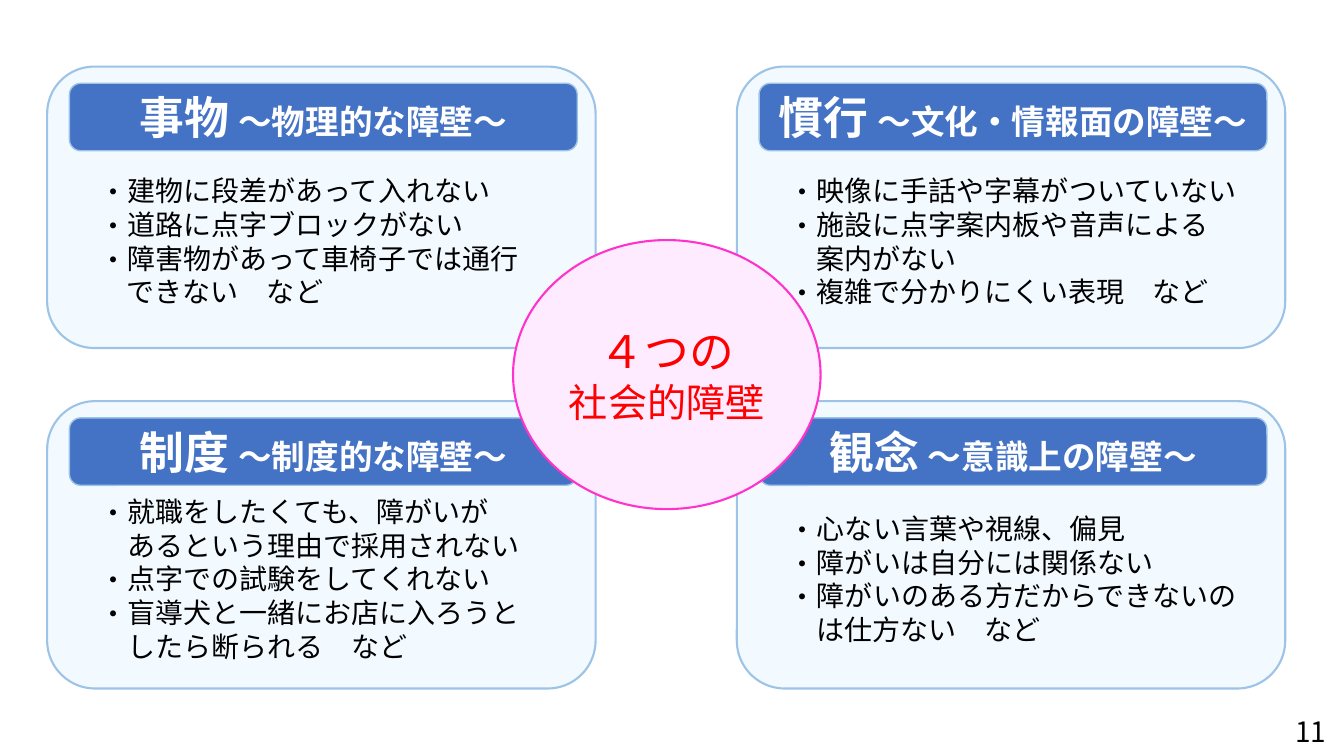
from pptx import Presentation
from pptx.dml.color import RGBColor
from pptx.enum.shapes import MSO_SHAPE as Kind
from pptx.enum.text import MSO_ANCHOR as Anchor, PP_ALIGN as Align
from pptx.oxml.ns import qn
from pptx.util import Cm, Pt
from lxml.etree import SubElement as sub

FONT = "Noto Sans CJK JP"
PALE = RGBColor(0xF3, 0xFA, 0xFF)
SKY = RGBColor(0x9D, 0xC3, 0xE6)
BLUE = RGBColor(0x44, 0x72, 0xC4)
PINK = RGBColor(0xFF, 0xEB, 0xFF)
ROSE = RGBColor(0xFF, 0x33, 0xCC)
RED = RGBColor(0xFF, 0x00, 0x00)
WHITE = RGBColor(0xFF, 0xFF, 0xFF)
BLACK = RGBColor(0x00, 0x00, 0x00)

COLS = (1.19, 18.57)
ROWS = ((1.68, 7.09), (10.11, 7.24))
WIDTH = 13.82

WALLS = (
    ("事物", "～物理的な障壁～", (
        ("建物に段差があって入れない",),
        ("道路に点字ブロックがない",),
        ("障害物があって車椅子では通行", "できない　など"))),
    ("慣行", "～文化・情報面の障壁～", (
        ("映像に手話や字幕がついていない",),
        ("施設に点字案内板や音声による", "案内がない"),
        ("複雑で分かりにくい表現　など",))),
    ("制度", "～制度的な障壁～", (
        ("就職をしたくても、障がいが", "あるという理由で採用されない"),
        ("点字での試験をしてくれない",),
        ("盲導犬と一緒にお店に入ろうと", "したら断られる　など"))),
    ("観念", "～意識上の障壁～", (
        ("心ない言葉や視線、偏見",),
        ("障がいは自分には関係ない",),
        ("障がいのある方だからできないの", "は仕方ない　など"))),
)


def add_run(para, text, size, color, bold=False):
    run = para.add_run()
    run.text = text
    font = run.font
    font.name, font.size, font.bold = FONT, Pt(size), bold
    font.color.rgb = color
    sub(font._element, qn("a:ea"), typeface=FONT)


def add_form(slide, kind, box, fill, line, width):
    form = slide.shapes.add_shape(kind, *map(Cm, box))
    form.shadow.inherit = False
    form.fill.solid()
    form.fill.fore_color.rgb = fill
    form.line.color.rgb = line
    form.line.width = Pt(width)
    frame = form.text_frame
    frame.word_wrap = True
    frame.vertical_anchor = Anchor.MIDDLE
    return frame


def add_para(frame, index, align):
    para = frame.add_paragraph() if index else frame.paragraphs[0]
    para.alignment = align
    return para


def set_bullet(para):
    props = para._p.get_or_add_pPr()
    props.set("marL", str(Cm(1.41)))
    props.set("indent", str(-Cm(0.7)))
    sub(props, qn("a:buFont"), typeface=FONT)
    sub(props, qn("a:buChar"), char="・")


def add_panel(slide, box, items):
    frame = add_form(slide, Kind.ROUNDED_RECTANGLE, box, PALE, SKY, 1.5)
    frame.margin_top = Cm(1.83)
    for index, lines in enumerate(items):
        para = add_para(frame, index, Align.LEFT)
        set_bullet(para)
        for row, line in enumerate(lines):
            if row:
                para.add_line_break()
            add_run(para, line, 20, BLACK)


def add_title(slide, left, top, name, note):
    box = (left + 0.56, top + 0.42, 12.8, 1.7)
    frame = add_form(slide, Kind.ROUNDED_RECTANGLE, box, BLUE, SKY, 1)
    para = add_para(frame, 0, Align.CENTER)
    for text, size in ((name, 32), (" ", 28), (note, 24)):
        add_run(para, text, size, WHITE, True)


def add_hub(slide):
    box = (12.93, 6.05, 7.75, 6.78)
    frame = add_form(slide, Kind.OVAL, box, PINK, ROSE, 1.5)
    for index, (text, size) in enumerate((("４つの", 32), ("社会的障壁", 28))):
        add_run(add_para(frame, index, Align.CENTER), text, size, RED)


def add_page(slide, text):
    box = slide.shapes.add_textbox(Cm(32.39), Cm(17.88), Cm(1.45), Cm(1.12))
    box.text_frame.word_wrap = False
    add_run(box.text_frame.paragraphs[0], text, 20, BLACK)


def main():
    deck = Presentation()
    deck.slide_width, deck.slide_height = Cm(33.87), Cm(19.05)
    slide = deck.slides.add_slide(deck.slide_layouts[6])
    for index, (name, note, items) in enumerate(WALLS):
        row, col = divmod(index, 2)
        left, (top, height) = COLS[col], ROWS[row]
        add_panel(slide, (left, top, WIDTH, height), items)
        add_title(slide, left, top, name, note)
    add_hub(slide)
    add_page(slide, "11")
    deck.save("out.pptx")


if __name__ == "__main__":
    main()
